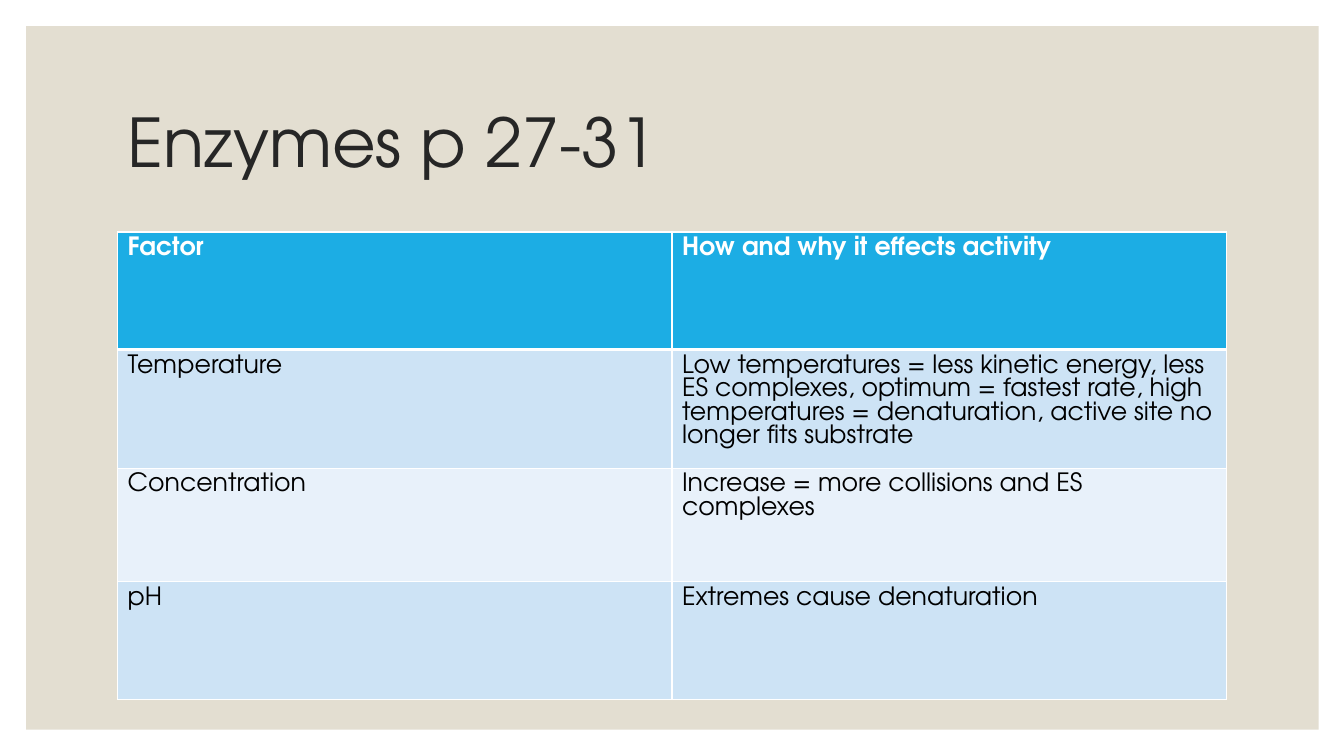
from lxml import etree
from pptx import Presentation
from pptx.dml.color import RGBColor
from pptx.enum.shapes import MSO_SHAPE
from pptx.enum.text import MSO_ANCHOR, MSO_AUTO_SIZE, PP_ALIGN
from pptx.oxml.ns import qn
from pptx.util import Pt

RECTANGLE = MSO_SHAPE.RECTANGLE
MIDDLE, TOP = MSO_ANCHOR.MIDDLE, MSO_ANCHOR.TOP
NO_FIT = MSO_AUTO_SIZE.NONE
LEFT = PP_ALIGN.LEFT

PX = 9525  # EMU per px, 96 px to the inch
SLIDE_W, SLIDE_H = 1280, 720
TITLE_LAYOUT = 5
FONT = "TeX Gyre Adventor"

WHITE = RGBColor(0xFF, 0xFF, 0xFF)
BLACK = RGBColor(0x00, 0x00, 0x00)
CHARCOAL = RGBColor(0x26, 0x26, 0x26)
SAND = RGBColor(0xE3, 0xDE, 0xD1)
HEADER_BLUE = RGBColor(0x1C, 0xAD, 0xE4)
BAND_BLUE = RGBColor(0xCD, 0xE3, 0xF5)
BAND_PALE = RGBColor(0xE8, 0xF1, 0xFA)

TITLE_FONT = {"name": FONT, "size": Pt(48), "bold": False}
CELL_FONT = {"name": FONT, "size": Pt(18)}

FACTORS = [
    ("Factor", "How and why it effects activity"),
    ("Temperature",
     "Low temperatures = less kinetic energy, less ES complexes, "
     "optimum = fastest rate, high temperatures = denaturation, "
     "active site no longer fits substrate"),
    ("Concentration", "Increase = more collisions and ES complexes"),
    ("pH", "Extremes cause denaturation"),
]
ROW_HEIGHTS = [112, 113, 108, 112]


def emu(box):
    return [length * PX for length in box]


def format_font(font, values, color):
    for attribute, value in values.items():
        setattr(font, attribute, value)
    font.color.rgb = color


def add_border(cell, side, width):
    line = etree.SubElement(cell._tc.get_or_add_tcPr(), qn("a:" + side),
                            w=str(Pt(width)))
    fill = etree.SubElement(line, qn("a:solidFill"))
    etree.SubElement(fill, qn("a:srgbClr"), val=str(WHITE))


def add_backdrop(slide, box):
    backdrop = slide.shapes.add_shape(RECTANGLE, *emu(box))
    backdrop.shadow.inherit = False
    backdrop.fill.solid()
    backdrop.fill.fore_color.rgb = SAND
    backdrop.line.fill.background()
    # Send behind the title
    slide.shapes._spTree.insert(2, backdrop._element)


def add_heading(slide, box, wording):
    heading = slide.shapes.title
    heading.left, heading.top, heading.width, heading.height = emu(box)
    frame = heading.text_frame
    frame.text = wording
    frame.word_wrap = True
    frame.auto_size = NO_FIT
    frame.vertical_anchor = MIDDLE
    paragraph = frame.paragraphs[0]
    paragraph.alignment = LEFT
    paragraph.line_spacing = 0.9
    format_font(paragraph.runs[0].font, TITLE_FONT, CHARCOAL)


def fill_cell(cell, wording, row):
    is_header = row == 0
    # Borders come before the fill in the cell properties
    for side in ("lnL", "lnR", "lnT", "lnB"):
        at_header_edge = (row, side) in ((0, "lnB"), (1, "lnT"))
        add_border(cell, side, 3 if at_header_edge else 1)
    cell.fill.solid()
    band = BAND_BLUE if row % 2 else BAND_PALE
    cell.fill.fore_color.rgb = HEADER_BLUE if is_header else band
    cell.vertical_anchor = TOP
    cell.text = wording
    font = cell.text_frame.paragraphs[0].runs[0].font
    format_font(font, {**CELL_FONT, "bold": is_header},
                WHITE if is_header else BLACK)


def add_factor_table(slide, box):
    columns = len(FACTORS[0])
    table = slide.shapes.add_table(len(FACTORS), columns, *emu(box)).table
    for column in table.columns:
        column.width = box[2] * PX // columns
    for row, (wordings, height) in enumerate(zip(FACTORS, ROW_HEIGHTS)):
        table.rows[row].height = height * PX
        for column, wording in enumerate(wordings):
            fill_cell(table.cell(row, column), wording, row)


def main():
    deck = Presentation()
    deck.slide_width, deck.slide_height = emu((SLIDE_W, SLIDE_H))
    slide = deck.slides.add_slide(deck.slide_layouts[TITLE_LAYOUT])
    add_backdrop(slide, (25, 25, 1231, 670))
    add_heading(slide, (112, 67, 1056, 144), "Enzymes p 27-31")
    add_factor_table(slide, (112, 221, 1056, sum(ROW_HEIGHTS)))
    deck.save("out.pptx")


if __name__ == "__main__":
    main()
